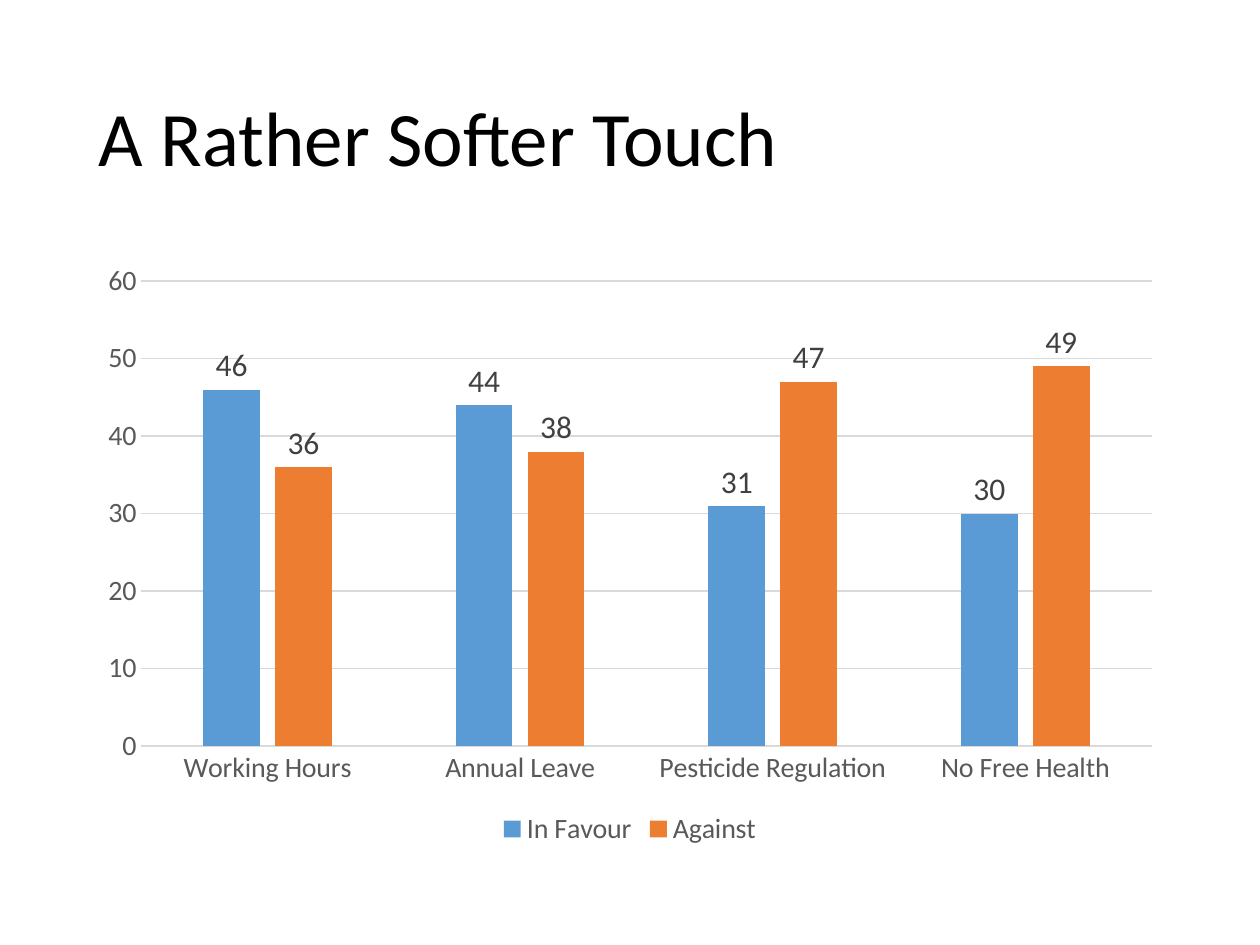
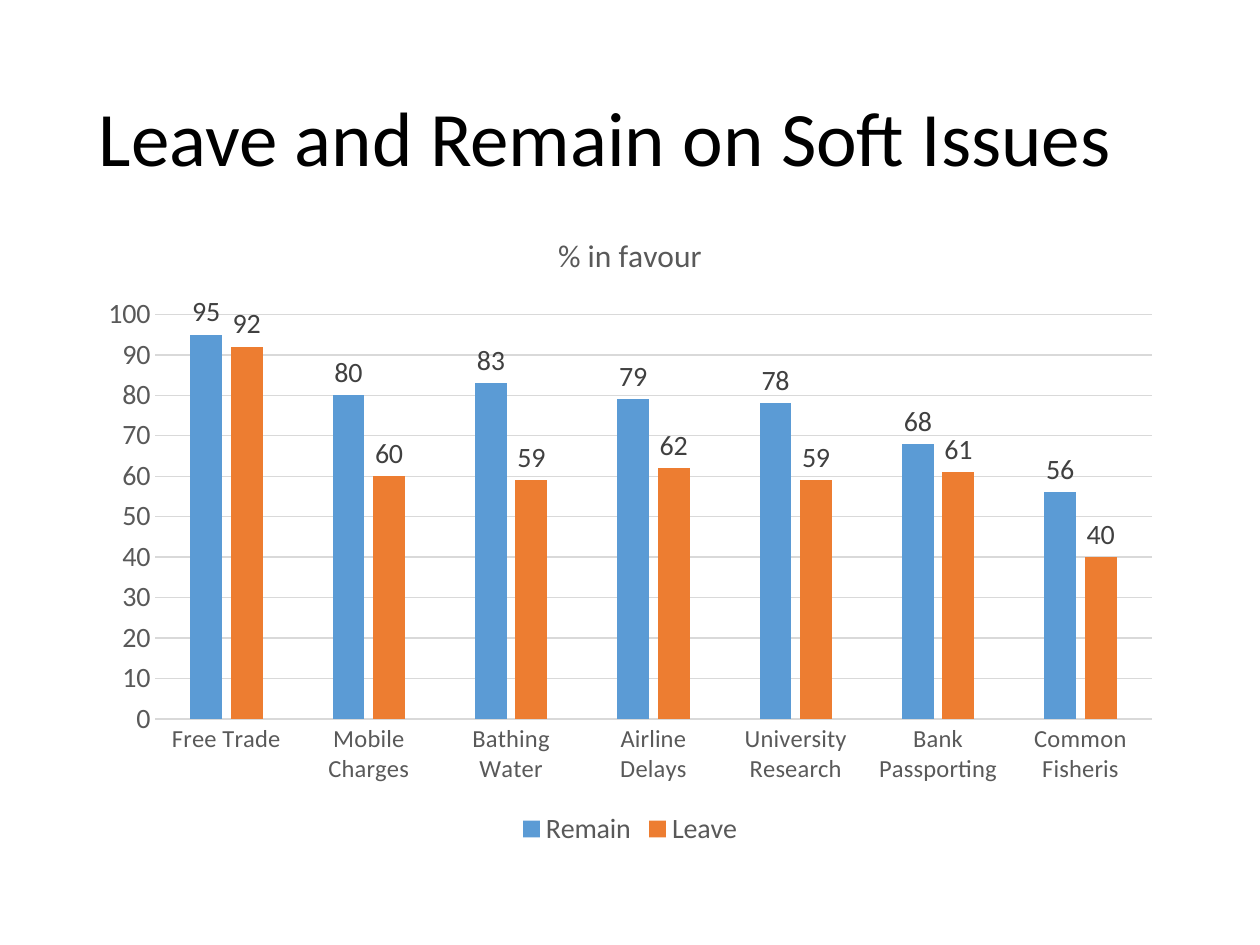
import dataclasses

import pptx
import pptx.chart.data
import pptx.dml.color
import pptx.enum.chart
import pptx.enum.text
import pptx.util

Pt = pptx.util.Pt
RGBColor = pptx.dml.color.RGBColor

# Shared look
FACE = "Calibri"
BLACK = RGBColor(0x00, 0x00, 0x00)
DARK = RGBColor(0x40, 0x40, 0x40)
GREY = RGBColor(0x59, 0x59, 0x59)
PALE = RGBColor(0xD9, 0xD9, 0xD9)
BLUE = RGBColor(0x5B, 0x9B, 0xD5)
ORANGE = RGBColor(0xED, 0x7D, 0x31)
WHITE = RGBColor(0xFF, 0xFF, 0xFF)

# Shared frame, in points
LEFT, WIDTH = 49.5, 621
HEAD_TOP, HEAD_HIGH = 28.8, 104.4
BASE = 486.7


@dataclasses.dataclass(frozen=True)
class Poll:
    title: str
    names: list[str]
    votes: dict[str, list[int]]
    top: float
    peak: int
    cat_size: int
    tag_size: int
    head: str = ""


POLLS = [
    Poll(
        "A Rather Softer Touch",
        ["Working Hours", "Annual Leave", "Pesticide Regulation", "No Free Health"],
        {"In Favour": [46, 44, 31, 30], "Against": [36, 38, 47, 49]},
        top=144, peak=60, cat_size=16, tag_size=18,
    ),
    Poll(
        "Leave and Remain on Soft Issues",
        ["Free Trade", "Mobile Charges", "Bathing Water", "Airline Delays",
         "University Research", "Bank Passporting", "Common Fisheris"],
        {"Remain": [95, 80, 83, 79, 78, 68, 56],
         "Leave": [92, 60, 59, 62, 59, 61, 40]},
        top=118.8, peak=100, cat_size=14, tag_size=16, head="% in favour",
    ),
]


def set_font(font, size: float, color: RGBColor = GREY) -> None:
    font.name = FACE
    font.size = Pt(size)
    font.bold = False
    font.color.rgb = color


def write(frame, text: str, *, size: float, color: RGBColor = GREY,
          space: float | None = None) -> None:
    """Put one formatted line of text into a text frame."""
    line = frame.paragraphs[0]
    line.line_spacing = space
    run = line.add_run()
    run.text = text
    set_font(run.font, size, color)


def add_title(slide, text: str) -> None:
    box = slide.shapes.add_textbox(Pt(LEFT), Pt(HEAD_TOP), Pt(WIDTH), Pt(HEAD_HIGH))
    frame = box.text_frame
    frame.word_wrap = True
    frame.vertical_anchor = pptx.enum.text.MSO_ANCHOR.MIDDLE
    write(frame, text, size=44, color=BLACK, space=0.9)


def style_axes(chart, poll: Poll) -> None:
    cats, vals = chart.category_axis, chart.value_axis
    for axis, size in ((cats, poll.cat_size), (vals, 16)):
        axis.major_tick_mark = pptx.enum.chart.XL_TICK_MARK.NONE
        axis.minor_tick_mark = pptx.enum.chart.XL_TICK_MARK.NONE
        set_font(axis.tick_labels.font, size)
    vals.minimum_scale, vals.maximum_scale, vals.major_unit = 0, poll.peak, 10
    vals.has_major_gridlines = True
    vals.format.line.fill.background()
    for line in (cats.format.line, vals.major_gridlines.format.line):
        line.color.rgb = PALE
        line.width = Pt(0.75)


def style_bars(plot, size: float) -> None:
    plot.gap_width, plot.overlap = 219, -27
    plot.vary_by_categories = False
    for bars, color in zip(plot.series, (BLUE, ORANGE)):
        bars.format.fill.solid()
        bars.format.fill.fore_color.rgb = color
        bars.invert_if_negative = False
        tags = bars.data_labels
        tags.show_value = True
        tags.position = pptx.enum.chart.XL_LABEL_POSITION.OUTSIDE_END
        set_font(tags.font, size, DARK)


def add_chart(slide, poll: Poll) -> None:
    data = pptx.chart.data.CategoryChartData()
    data.categories = poll.names
    for name, vals in poll.votes.items():
        data.add_series(name, vals)
    chart = slide.shapes.add_chart(
        pptx.enum.chart.XL_CHART_TYPE.COLUMN_CLUSTERED,
        Pt(LEFT), Pt(poll.top), Pt(WIDTH), Pt(BASE - poll.top), data,
    ).chart
    set_font(chart.font, 10, BLACK)

    # Title and legend
    chart.has_title = bool(poll.head)
    if poll.head:
        write(chart.chart_title.text_frame, poll.head, size=18)
        chart.chart_title.include_in_layout = False
    chart.has_legend = True
    chart.legend.position = pptx.enum.chart.XL_LEGEND_POSITION.BOTTOM
    chart.legend.include_in_layout = False
    set_font(chart.legend.font, 16)

    style_axes(chart, poll)
    style_bars(chart.plots[0], poll.tag_size)


def main() -> None:
    deck = pptx.Presentation()
    deck.slide_width, deck.slide_height = Pt(720), Pt(540)
    for poll in POLLS:
        slide = deck.slides.add_slide(deck.slide_layouts[6])
        slide.background.fill.solid()
        slide.background.fill.fore_color.rgb = WHITE
        add_title(slide, poll.title)
        add_chart(slide, poll)
    deck.save("out.pptx")


if __name__ == "__main__":
    main()
